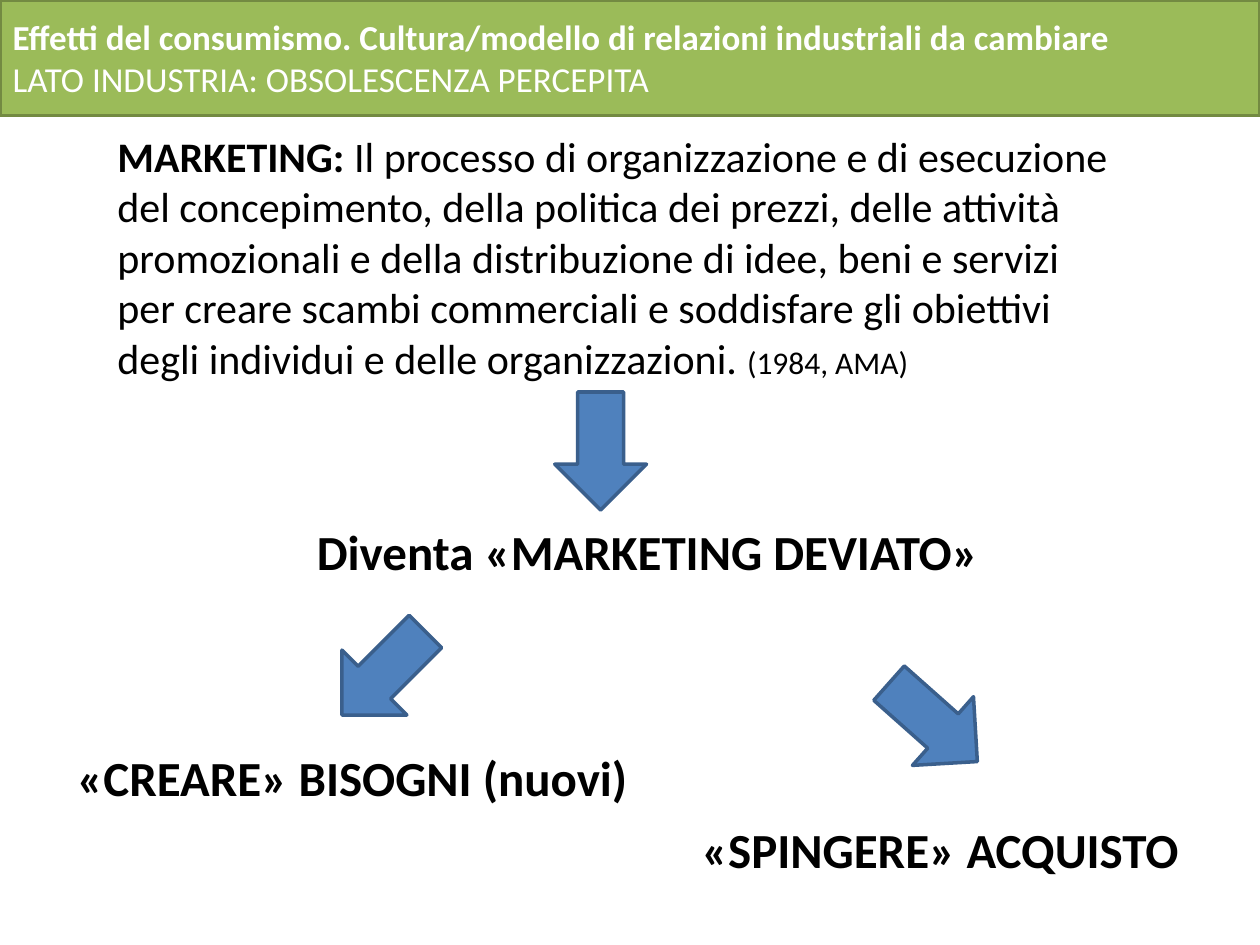
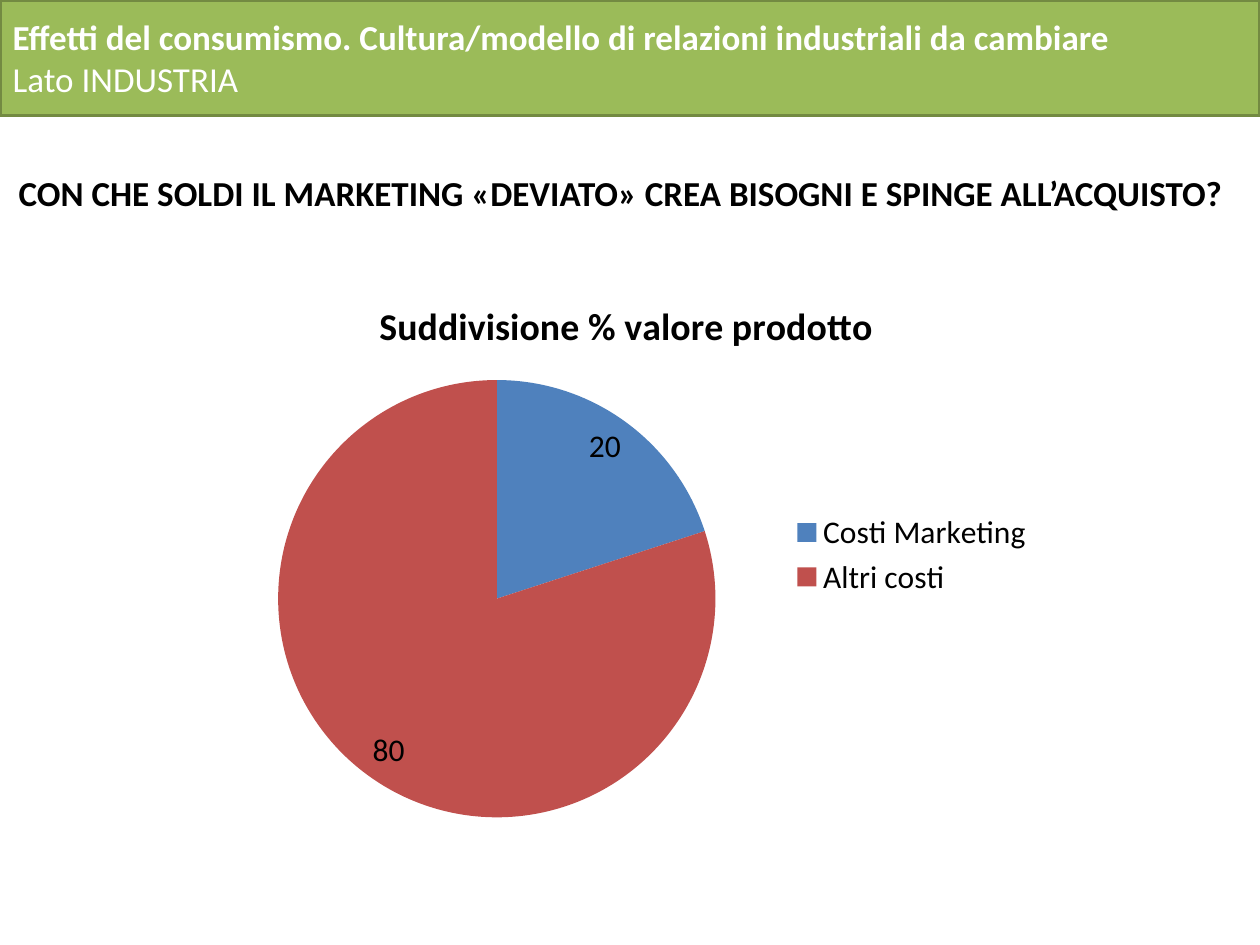
from pptx import Presentation
from pptx.chart.data import CategoryChartData
from pptx.dml.color import RGBColor
from pptx.enum.chart import XL_CHART_TYPE, XL_LABEL_POSITION, XL_LEGEND_POSITION
from pptx.enum.shapes import MSO_SHAPE
from pptx.enum.text import MSO_ANCHOR, MSO_AUTO_SIZE, PP_ALIGN
from pptx.util import Pt

FONT = "Calibri"
BLACK, WHITE = "000000", "FFFFFF"
GREEN, DARK_GREEN = "9BBB59", "738A42"
BLUE, DARK_BLUE, RED = "4F81BD", "3A5F8C", "C0504D"
SLIDE_WIDTH, SLIDE_HEIGHT, BAND_HEIGHT = 720, 540, 66
ARROW_WIDTH, ARROW_HEIGHT = 52.5, 67.5
HEADING = "Effetti del consumismo. Cultura/modello di relazioni industriali da cambiare"


def apply_format(target, values):
    """Set every attribute listed in values on target."""
    for attribute, value in values.items():
        setattr(target, attribute, value)


def set_colour(colour_format, hex_colour):
    """Give a colour format the colour written as a hex string."""
    colour_format.rgb = RGBColor.from_string(hex_colour)


def place(element, left, top, width, height):
    """Move and size an element in points."""
    apply_format(element, {"left": Pt(left), "top": Pt(top),
                           "width": Pt(width), "height": Pt(height)})


def set_font(font, size, bold=False, hex_colour=BLACK):
    """Format a font in the shared typeface."""
    apply_format(font, {"name": FONT, "size": Pt(size), "bold": bold})
    set_colour(font.color, hex_colour)


def paint(surface, fill, outline):
    """Fill and outline a shape without a shadow."""
    surface.shadow.inherit = False
    surface.fill.solid()
    set_colour(surface.fill.fore_color, fill)
    set_colour(surface.line.color, outline)
    surface.line.width = Pt(2)


def add_run(paragraph, wording, size, bold, hex_colour=BLACK):
    """Append a formatted run to a paragraph."""
    run = paragraph.add_run()
    run.text = wording
    set_font(run.font, size, bold, hex_colour)


def add_titled_slide(deck, subheading):
    """Add a slide with the green title band."""
    slide = deck.slides.add_slide(deck.slide_layouts[5])
    band = slide.shapes.title
    place(band, 0, 0, SLIDE_WIDTH, BAND_HEIGHT)
    paint(band, GREEN, DARK_GREEN)
    frame = band.text_frame
    apply_format(frame, {"vertical_anchor": MSO_ANCHOR.MIDDLE, "word_wrap": True,
                         "auto_size": MSO_AUTO_SIZE.NONE})
    lines = [(frame.paragraphs[0], HEADING, True),
             (frame.add_paragraph(), subheading, False)]
    for paragraph, wording, bold in lines:
        paragraph.alignment = PP_ALIGN.LEFT
        add_run(paragraph, wording, 20, bold, WHITE)
    return slide


def add_statement(slide, box, runs, wrap=False):
    """Add a text box from (wording, size, bold) runs."""
    statement = slide.shapes.add_textbox(*map(Pt, box))
    frame = statement.text_frame
    apply_format(frame, {"word_wrap": wrap,
                         "auto_size": MSO_AUTO_SIZE.SHAPE_TO_FIT_TEXT})
    for wording, size, bold in runs:
        add_run(frame.paragraphs[0], wording, size, bold)


def add_arrow(slide, left, top, rotation=0):
    """Add a blue block arrow pointing down, then rotated."""
    arrow = slide.shapes.add_shape(MSO_SHAPE.DOWN_ARROW, Pt(left), Pt(top),
                                   Pt(ARROW_WIDTH), Pt(ARROW_HEIGHT))
    arrow.rotation = rotation
    paint(arrow, BLUE, DARK_BLUE)


def add_cost_pie(slide, box, heading, costs):
    """Add a pie chart from a mapping of cost to (value, colour)."""
    cost_data = CategoryChartData()
    cost_data.categories = list(costs)
    cost_data.add_series("Valore", [value for value, _ in costs.values()])
    chart = slide.shapes.add_chart(XL_CHART_TYPE.PIE, *map(Pt, box), cost_data).chart
    set_font(chart.font, 18)

    chart.has_title = True
    add_run(chart.chart_title.text_frame.paragraphs[0], heading, 21.6, True)
    chart.chart_title.include_in_layout = False

    chart.has_legend = True
    apply_format(chart.legend, {"position": XL_LEGEND_POSITION.RIGHT,
                                "include_in_layout": False})
    set_font(chart.legend.font, 18)

    pie = chart.plots[0]
    apply_format(pie, {"vary_by_categories": True, "has_data_labels": True})
    apply_format(pie.data_labels, {"show_value": True, "show_percentage": False,
                                   "position": XL_LABEL_POSITION.INSIDE_END})
    set_font(pie.data_labels.font, 18)
    for index, (_, hex_colour) in enumerate(costs.values()):
        slice_fill = pie.series[0].points[index].format.fill
        slice_fill.solid()
        set_colour(slice_fill.fore_color, hex_colour)


def build_marketing_slide(deck):
    """Show how marketing turns into its deviated form."""
    slide = add_titled_slide(deck, "LATO INDUSTRIA: OBSOLESCENZA PERCEPITA")
    definition = (
        "Il processo di organizzazione e di esecuzione del concepimento, della "
        "politica dei prezzi, delle attività promozionali e della distribuzione di "
        "idee, beni e servizi per creare scambi commerciali e soddisfare gli "
        "obiettivi degli individui e delle organizzazioni. ")
    add_statement(slide, (60, 71, 590, 153),
                  [("MARKETING: ", 24, True), (definition, 24, False),
                   ("(1984, AMA)", 18, False)], wrap=True)
    for left, top, rotation in [(317, 224, 0), (193, 351, 45), (507, 379, 311.6)]:
        add_arrow(slide, left, top, rotation)
    for wording, box in [
        ("Diventa «MARKETING DEVIATO»", (174, 294.5, 394, 41)),
        ("«CREARE» BISOGNI (nuovi)", (37, 423.5, 333, 41)),
        ("«SPINGERE» ACQUISTO", (394, 464.5, 290, 41)),
    ]:
        add_statement(slide, box, [(wording, 28, True)])


def build_cost_slide(deck):
    """Show the share of marketing in the product value."""
    slide = add_titled_slide(deck, "Lato INDUSTRIA")
    question = "CON CHE SOLDI IL MARKETING «DEVIATO» CREA BISOGNI E SPINGE ALL’ACQUISTO?"
    add_statement(slide, (3.6, 94.5, 708.5, 31.5), [(question, 20, True)])
    add_cost_pie(slide, (118, 157, 480, 320), "Suddivisione % valore prodotto",
                 {"Costi Marketing": (20, BLUE), "Altri costi": (80, RED)})


def main():
    """Build and save the presentation."""
    deck = Presentation()
    apply_format(deck, {"slide_width": Pt(SLIDE_WIDTH), "slide_height": Pt(SLIDE_HEIGHT)})
    build_marketing_slide(deck)
    build_cost_slide(deck)
    deck.save("out.pptx")


if __name__ == "__main__":
    main()
